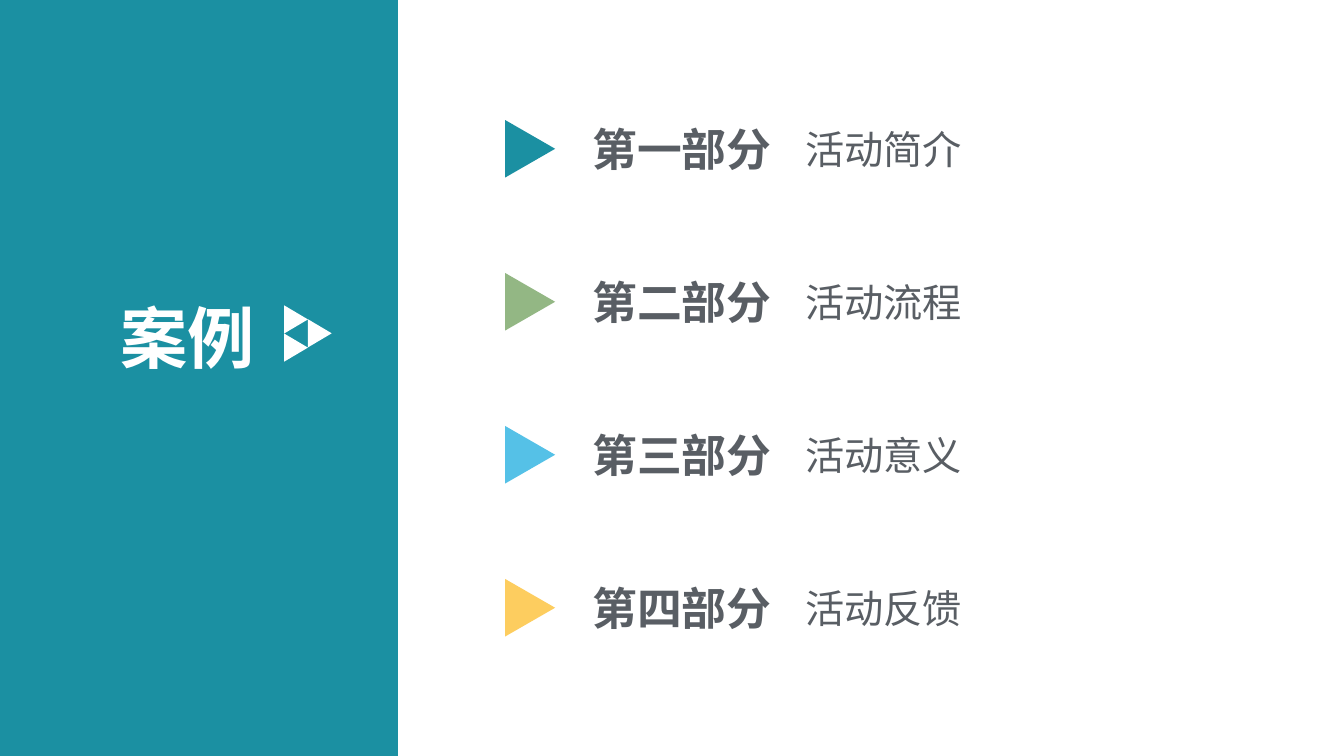
import pptx
import pptx.dml.color
import pptx.enum.shapes
import pptx.enum.text
import pptx.oxml
import pptx.oxml.ns
import pptx.util
from pptx.util import Cm

FONT = "Noto Sans CJK SC"
TEAL = "1B90A2"
WHITE = "FFFFFF"
GREY = "595E64"


def paint(shape, colour):
    shape.shadow.inherit = False
    shape.fill.solid()
    shape.fill.fore_color.rgb = pptx.dml.color.RGBColor.from_string(colour)
    shape.line.fill.background()


def write(box, text, size, colour, bold):
    frame = box.text_frame
    frame.word_wrap = True
    frame.auto_size = pptx.enum.text.MSO_AUTO_SIZE.NONE
    frame.vertical_anchor = pptx.enum.text.MSO_ANCHOR.MIDDLE
    para = frame.paragraphs[0]
    para.alignment = pptx.enum.text.PP_ALIGN.LEFT
    span = para.add_run()
    span.text = text
    span.font.size = pptx.util.Pt(size)
    span.font.bold = bold
    span.font.name = FONT
    span.font.color.rgb = pptx.dml.color.RGBColor.from_string(colour)
    # East Asian glyphs take their typeface from a:ea
    east_asian = pptx.oxml.parse_xml(
        f'<a:ea {pptx.oxml.ns.nsdecls("a")} typeface="{FONT}"/>')
    span.font._element.find(pptx.oxml.ns.qn("a:latin")).addnext(east_asian)


deck = pptx.Presentation()
deck.slide_width = Cm(33.87)
deck.slide_height = Cm(19.05)
page = deck.slides.add_slide(deck.slide_layouts[5])

# Left panel, placed behind the title
panel = page.shapes.add_shape(
    pptx.enum.shapes.MSO_SHAPE.RECTANGLE, 0, 0, Cm(10.03), deck.slide_height)
paint(panel, TEAL)
title = page.shapes.title
title._element.addprevious(panel._element)
title.left, title.top = Cm(2.79), Cm(7.34)
title.width, title.height = Cm(4.42), Cm(2.31)
write(title, "案例", 48, WHITE, True)

# Triangles pointing right: left edge, vertical centre, base, height, colour
triangles = [
    (7.16, 8.05, 0.71, 0.6, WHITE),
    (7.16, 8.76, 0.71, 0.6, WHITE),
    (7.76, 8.4, 0.71, 0.6, WHITE),
]

# Agenda rows
parts = [
    ("第一部分", "活动简介", TEAL),
    ("第二部分", "活动流程", "93B784"),
    ("第三部分", "活动意义", "55C1E7"),
    ("第四部分", "活动反馈", "FDCD5F"),
]
for row, (label, topic, colour) in enumerate(parts):
    centre = 3.75 + 3.855 * row
    triangles.append((12.73, centre, 1.45, 1.26, colour))
    for text, left, width, height, size, bold in [
        (label, 14.68, 5.36, 1.63, 32, True),
        (topic, 20.04, 7.85, 1.45, 28, False),
    ]:
        box = page.shapes.add_textbox(
            Cm(left), Cm(centre - height / 2), Cm(width), Cm(height))
        write(box, text, size, GREY, bold)

# Draw all triangles, turned about their centres
for left, centre, base, height, colour in triangles:
    triangle = page.shapes.add_shape(
        pptx.enum.shapes.MSO_SHAPE.ISOSCELES_TRIANGLE,
        Cm(left + (height - base) / 2), Cm(centre - height / 2),
        Cm(base), Cm(height))
    triangle.rotation = 90
    paint(triangle, colour)

deck.save("out.pptx")
